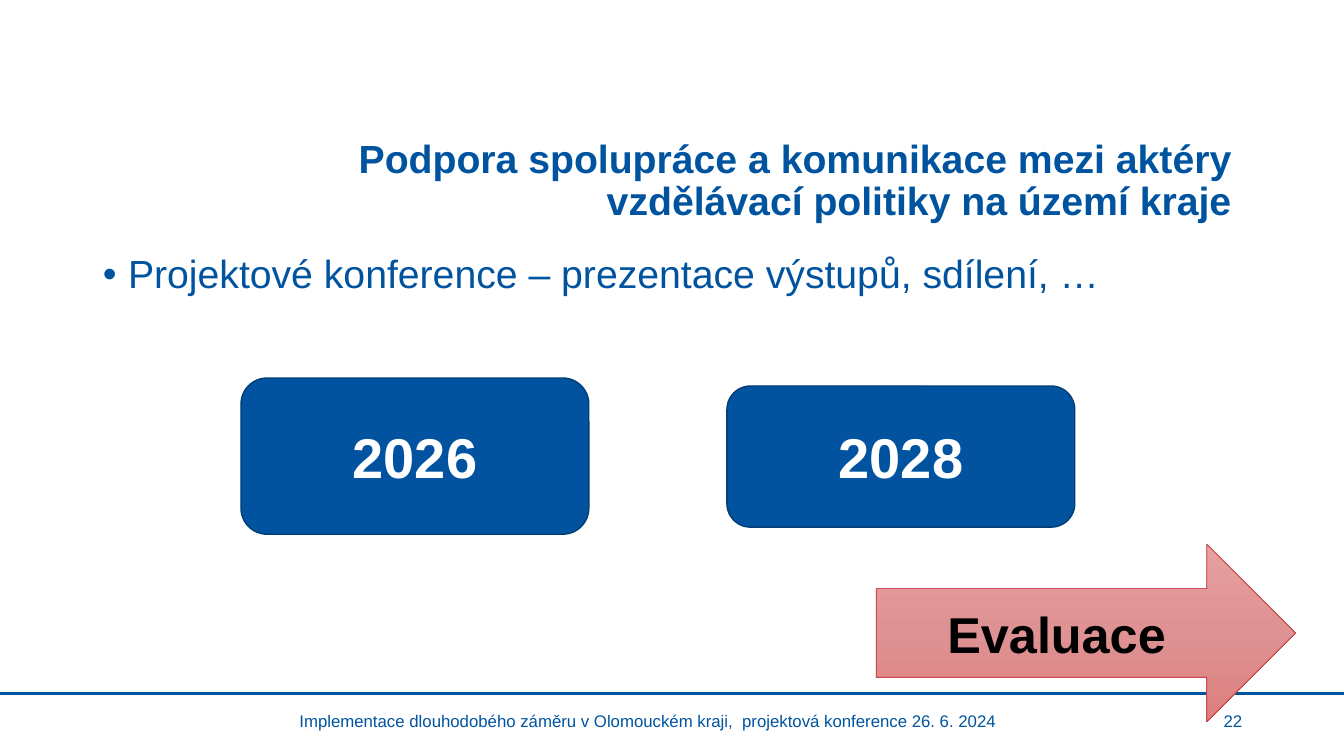
from copy import deepcopy

from lxml import etree
from pptx import Presentation
from pptx.dml.color import RGBColor
from pptx.enum.shapes import MSO_CONNECTOR, MSO_SHAPE
from pptx.enum.text import MSO_ANCHOR, MSO_AUTO_SIZE, PP_ALIGN
from pptx.oxml.ns import qn
from pptx.util import Inches, Pt

LEFT, CENTER, RIGHT = PP_ALIGN.LEFT, PP_ALIGN.CENTER, PP_ALIGN.RIGHT
TOP, MIDDLE = MSO_ANCHOR.TOP, MSO_ANCHOR.MIDDLE
NO_AUTOFIT = MSO_AUTO_SIZE.NONE
ROUNDED, ARROW = MSO_SHAPE.ROUNDED_RECTANGLE, MSO_SHAPE.RIGHT_ARROW
STRAIGHT = MSO_CONNECTOR.STRAIGHT

TEXT_BLUE = RGBColor(0x00, 0x54, 0x9F)
BLUE = RGBColor(0x02, 0x53, 0x9F)
DARK_BLUE = RGBColor(0x01, 0x3D, 0x76)
RED = RGBColor(0xC4, 0x26, 0x2D)
WHITE = RGBColor(0xFF, 0xFF, 0xFF)
BLACK = RGBColor(0x00, 0x00, 0x00)
ARROW_STOPS = [
    (0, RGBColor(0xE7, 0x9F, 0xA0)),
    (0.5, RGBColor(0xDE, 0x92, 0x93)),
    (1, RGBColor(0xDE, 0x7E, 0x7F)),
]


def place(shape, left, top, width, height):
    box = {"left": left, "top": top, "width": width, "height": height}
    for side, inches in box.items():
        setattr(shape, side, Inches(inches))


def write(shape, text, size, color, align=CENTER, anchor=MIDDLE, bold=False, spacing=1.0):
    """Fill a shape with one formatted paragraph and return the paragraph."""
    frame = shape.text_frame
    frame.text = text
    frame.word_wrap = True
    frame.auto_size = NO_AUTOFIT
    frame.vertical_anchor = anchor
    paragraph = frame.paragraphs[0]
    paragraph.alignment = align
    paragraph.line_spacing = spacing
    paragraph.space_before = Pt(0)
    for run in paragraph.runs:
        run.font.color.rgb = color
        for name, value in {"name": "Arial", "size": Pt(size), "bold": bold}.items():
            setattr(run.font, name, value)
    return paragraph


prs = Presentation()
prs.slide_width, prs.slide_height = Inches(13.33), Inches(7.5)
slide = prs.slides.add_slide(prs.slide_layouts[1])
shapes = slide.shapes

footer_rule = shapes.add_connector(STRAIGHT, 0, Inches(6.88), prs.slide_width, Inches(6.88))
footer_rule.line.color.rgb = BLUE
footer_rule.line.width = Pt(1.5)
etree.SubElement(footer_rule._element.spPr, qn("a:effectLst"))

title = shapes.title
place(title, 0.92, 1.43, 11.5, 0.75)
write(title, "Podpora spolupráce a komunikace mezi aktéry \vvzdělávací politiky na území kraje ",
      28, TEXT_BLUE, RIGHT, bold=True, spacing=0.9)

body = slide.placeholders[1]
place(body, 0.92, 2.48, 11.5, 4.22)
conference = write(body, "Projektové konference – prezentace výstupů, sdílení, …",
                   28, TEXT_BLUE, LEFT, TOP, spacing=0.9)
bullet_format = conference._p.get_or_add_pPr()
bullet_format.set("marL", str(Inches(0.25)))
bullet_format.set("indent", str(Inches(-0.25)))
etree.SubElement(bullet_format, qn("a:buFont"), typeface="Arial")
etree.SubElement(bullet_format, qn("a:buChar"), char="•")

for text, left, width, align in [
    ("Implementace dlouhodobého záměru v Olomouckém kraji,  projektová konference 26. 6. 2024",
     2.2, 8.46, CENTER),
    ("22", 9.42, 3, RIGHT),
]:
    footer = shapes.add_textbox(Inches(left), Inches(6.95), Inches(width), Inches(0.4))
    write(footer, text, 12, TEXT_BLUE, align)

for year, left, top, height in [("2026", 2.39, 3.75, 1.55), ("2028", 7.21, 3.83, 1.4)]:
    year_box = shapes.add_shape(ROUNDED, Inches(left), Inches(top), Inches(3.45), Inches(height))
    year_box.shadow.inherit = False
    year_box.fill.solid()
    year_box.fill.fore_color.rgb = BLUE
    year_box.line.color.rgb = DARK_BLUE
    year_box.line.width = Pt(1)
    write(year_box, year, 40, WHITE, bold=True)

evaluation = shapes.add_shape(ARROW, Inches(8.69), Inches(5.4), Inches(4.16), Inches(1.76))
evaluation.shadow.inherit = False
evaluation.fill.gradient()
evaluation.fill.gradient_angle = 270
first_stop = evaluation._element.spPr.find(".//" + qn("a:gs"))
first_stop.addnext(deepcopy(first_stop))
for stop, (position, color) in zip(evaluation.fill.gradient_stops, ARROW_STOPS):
    stop.position = position
    stop.color.rgb = color
evaluation.line.color.rgb = RED
evaluation.line.width = Pt(0.5)
write(evaluation, "Evaluace ", 36, BLACK, bold=True)

prs.save("out.pptx")
